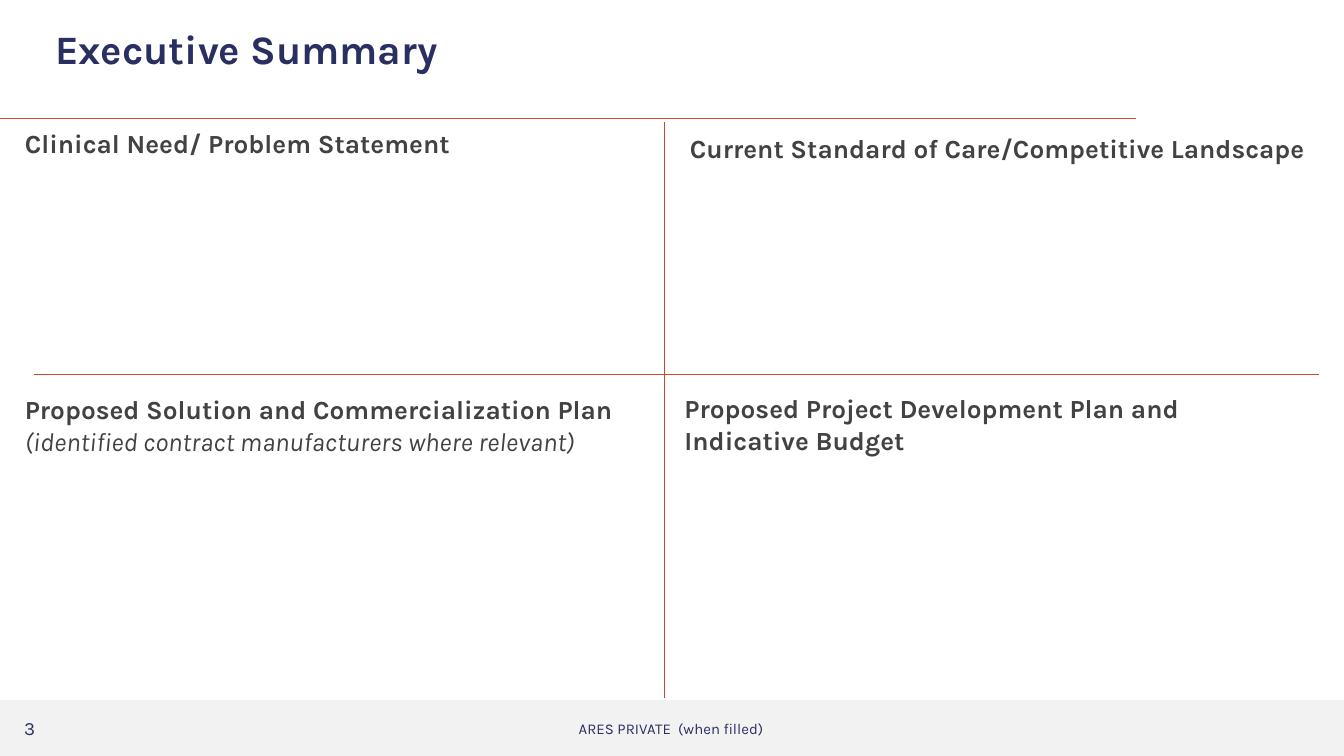
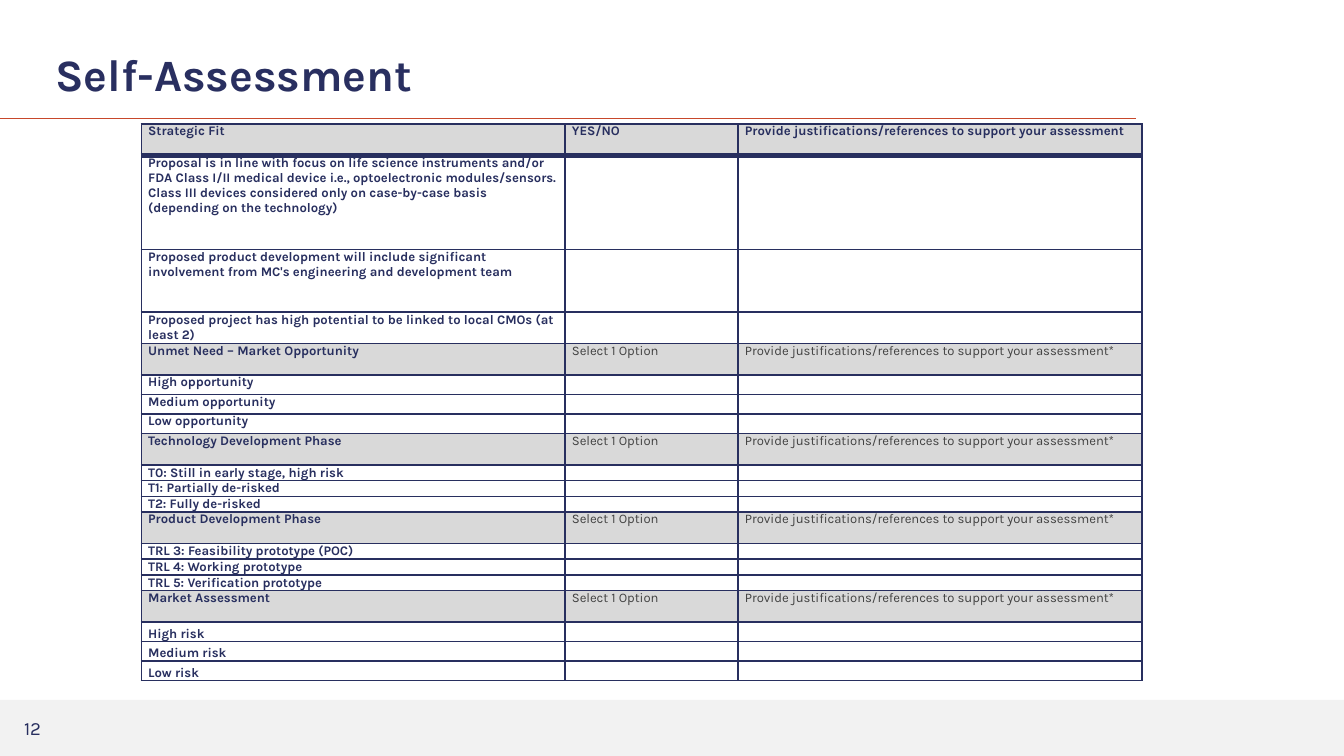
import pptx
import pptx.dml.color
import pptx.enum.shapes
import pptx.enum.text
import pptx.oxml
import pptx.oxml.ns
import pptx.util
from lxml import etree

Pt = pptx.util.Pt
RGBColor = pptx.dml.color.RGBColor
Anchor = pptx.enum.text.MSO_ANCHOR
Align = pptx.enum.text.PP_ALIGN
AutoSize = pptx.enum.text.MSO_AUTO_SIZE
qn = pptx.oxml.ns.qn

# Shared look
FONT = "Karla"
TITLE_NAVY = RGBColor(0x29, 0x2F, 0x60)
NAVY = RGBColor(0x28, 0x2F, 0x5F)
RUST = RGBColor(0xC7, 0x48, 0x2B)
CHARCOAL = RGBColor(0x42, 0x42, 0x42)
BAND_GREY = RGBColor(0xF2, 0xF2, 0xF2)
SECTION_GREY = RGBColor(0xD9, 0xD9, 0xD9)
WHITE = RGBColor(0xFF, 0xFF, 0xFF)

# Quadrants: left, top, width, height, heading, remark
QUADRANTS = [
    (6.2, 64.8, 286.6, 24.5, "Clinical Need/ Problem Statement", None),
    (362.5, 67.4, 364.3, 24.5,
     "Current Standard of Care/Competitive Landscape", None),
    (6.2, 207.4, 361.4, 41, "Proposed Solution and Commercialization Plan",
     "(identified contract manufacturers where relevant)"),
    (359.6, 206.9, 341.3, 41,
     "Proposed Project Development Plan and Indicative Budget", None),
]

# Assessment table: sections of (heading, criteria, row heights, anchor)
COLUMN_WIDTHS = (227, 92.7, 216.2)
HEADING_HEIGHT = 16.8
JUSTIFY = "Provide justifications/references to support your assessment"
SECTIONS = [
    ("Strategic Fit", [
        "Proposal is in line with focus on life science instruments and/or "
        "FDA Class I/II medical device i.e., optoelectronic modules/sensors. "
        "Class III devices considered only on case-by-case basis "
        "(depending on the technology)",
        "Proposed product development will include significant involvement "
        "from MC's engineering and development team",
        "Proposed project has high potential to be linked to local CMOs "
        "(at least 2)",
    ], (50.4, 33.7, 16.8), Anchor.TOP),
    ("Unmet Need – Market Opportunity",
     ["High opportunity", "Medium opportunity", "Low opportunity"],
     (10.5,) * 3, Anchor.TOP),
    ("Technology Development Phase",
     ["T0: Still in early stage, high risk", "T1: Partially de-risked",
      "T2: Fully de-risked"],
     (8.4,) * 3, Anchor.BOTTOM),
    ("Product Development Phase",
     ["TRL 3: Feasibility prototype (POC)", "TRL 4: Working prototype",
      "TRL 5: Verification prototype"],
     (8.4,) * 3, Anchor.BOTTOM),
    ("Market Assessment", ["High risk", "Medium risk", "Low risk"],
     (10.5,) * 3, Anchor.BOTTOM),
]


def write(frame, text, *, size, color, bold=False, italic=False,
          align=Align.LEFT, spacing=None):
    """Fill the frame's empty first paragraph, or add another one."""
    para = frame.paragraphs[0]
    if para.runs:
        para = frame.add_paragraph()
    para.alignment = align
    para.space_before = Pt(0)
    if spacing:
        para.line_spacing = spacing
    span = para.add_run()
    span.text = text
    span.font.name = FONT
    span.font.size = Pt(size)
    span.font.bold = bold
    span.font.italic = italic
    span.font.color.rgb = color
    return para


def place(shape, left, top, width, height):
    shape.left, shape.top = Pt(left), Pt(top)
    shape.width, shape.height = Pt(width), Pt(height)


def add_text_box(page, left, top, width, height):
    box = page.shapes.add_textbox(Pt(left), Pt(top), Pt(width), Pt(height))
    box.text_frame.word_wrap = True
    box.text_frame.auto_size = AutoSize.SHAPE_TO_FIT_TEXT
    return box.text_frame


def add_rule(page, x1, y1, x2, y2, weight):
    rule = page.shapes.add_connector(
        pptx.enum.shapes.MSO_CONNECTOR.STRAIGHT, Pt(x1), Pt(y1), Pt(x2), Pt(y2))
    rule.line.color.rgb = RUST
    rule.line.width = Pt(weight)
    etree.SubElement(rule._element.spPr, qn("a:effectLst"))


def add_band(page):
    """Footer band, sent behind the placeholders."""
    band = page.shapes.add_shape(
        pptx.enum.shapes.MSO_SHAPE.RECTANGLE, 0, Pt(375), Pt(720), Pt(30))
    band.shadow.inherit = False
    band.fill.solid()
    band.fill.fore_color.rgb = BAND_GREY
    band.line.fill.background()
    page.shapes.title._element.addprevious(band._element)


def add_page(deck, layout, number, title, title_size, title_top, anchor):
    """Page with title, title rule, footer band and page number."""
    page = deck.slides.add_slide(deck.slide_layouts[layout])
    add_band(page)
    add_rule(page, 0, 63.4, 608.4, 63.4, 0.75)
    write(add_text_box(page, 5.8, 380.5, 51.8, 19.4), str(number),
          size=10, color=NAVY)

    heading = page.shapes.title
    place(heading, 22.3, title_top, 678.2, 39.6)
    frame = heading.text_frame
    frame.word_wrap = True
    frame.auto_size = AutoSize.NONE
    frame.vertical_anchor = anchor
    if anchor == Anchor.TOP:
        frame.margin_top = 0
    write(frame, title, size=title_size, color=TITLE_NAVY, bold=True,
          spacing=0.9)
    return page


def add_marking(page, text):
    """Centred classification marking in the footer band."""
    marking = page.placeholders[1]
    place(marking, 258.5, 383, 202.3, 16.6)
    marking.text_frame.auto_size = AutoSize.NONE
    para = write(marking.text_frame, text, size=8, color=NAVY,
                 align=Align.CENTER, spacing=0.9)
    properties = para._p.get_or_add_pPr()
    properties.set("marL", "0")
    properties.set("indent", "0")
    etree.SubElement(properties, qn("a:buNone"))


def set_borders(cell, top, bottom):
    weights = {"a:lnL": 1, "a:lnR": 1, "a:lnT": top, "a:lnB": bottom}
    properties = cell._tc.get_or_add_tcPr()
    for position, (tag, weight) in enumerate(weights.items()):
        edge = etree.Element(qn(tag), w=str(Pt(weight)))
        fill = etree.SubElement(edge, qn("a:solidFill"))
        etree.SubElement(fill, qn("a:srgbClr"), val=str(NAVY))
        properties.insert(position, edge)


def fill_cell(cell, text, *, color=NAVY, bold=True, fill=WHITE,
              anchor=Anchor.TOP, top=1, bottom=1):
    cell.fill.solid()
    cell.fill.fore_color.rgb = fill
    cell.margin_left = cell.margin_right = Pt(3.6)
    cell.margin_top = cell.margin_bottom = 0
    cell.vertical_anchor = anchor
    set_borders(cell, top, bottom)
    if text:
        write(cell.text_frame, text, size=7, color=color, bold=bold)
    else:
        # Keeps an empty cell from stretching its row
        etree.SubElement(cell.text_frame.paragraphs[0]._p,
                         qn("a:endParaRPr"), sz="700")


def add_assessment(page):
    row_count = sum(1 + len(criteria) for _, criteria, _, _ in SECTIONS)
    height = sum(HEADING_HEIGHT + sum(heights) for _, _, heights, _ in SECTIONS)
    table = page.shapes.add_table(
        row_count, len(COLUMN_WIDTHS), Pt(75.8), Pt(66.4),
        Pt(sum(COLUMN_WIDTHS)), Pt(height)).table
    table.first_row = table.horz_banding = False
    for column, width in zip(table.columns, COLUMN_WIDTHS):
        column.width = Pt(width)

    row = 0
    for heading, criteria, heights, anchor in SECTIONS:
        # Grey heading row; the first one is the table header
        first = row == 0
        table.rows[row].height = Pt(HEADING_HEIGHT)
        labels = (heading, "YES/NO" if first else "Select 1 Option",
                  JUSTIFY if first else JUSTIFY + "*")
        for column, label in enumerate(labels):
            strong = first or column == 0
            fill_cell(table.cell(row, column), label, bold=strong,
                      color=NAVY if strong else CHARCOAL,
                      fill=SECTION_GREY, bottom=3 if first else 1)
        # Criteria with blank answer cells
        for criterion, row_height in zip(criteria, heights):
            row += 1
            table.rows[row].height = Pt(row_height)
            for column, label in enumerate((criterion, "", "")):
                fill_cell(table.cell(row, column), label, anchor=anchor,
                          top=3 if row == 1 else 1)
        row += 1


def main():
    deck = pptx.Presentation()
    deck.slide_width, deck.slide_height = Pt(720), Pt(405)

    # Executive summary: four quadrants
    summary = add_page(deck, 1, 3, "Executive Summary", 21.6, 15.9, Anchor.TOP)
    add_marking(summary, "ARES PRIVATE  (when filled)")
    add_rule(summary, 356, 65.5, 356, 373.7, 0.5)
    add_rule(summary, 706.7, 200.6, 18, 200.6, 0.5)
    for left, top, width, height, heading, remark in QUADRANTS:
        frame = add_text_box(summary, left, top, width, height)
        write(frame, heading, size=14, color=CHARCOAL, bold=True)
        if remark:
            write(frame, remark, size=14, color=CHARCOAL, italic=True)

    # Self-assessment: scoring table
    assessment = add_page(deck, 5, 12, "Self-Assessment", 24, 21.6,
                          Anchor.MIDDLE)
    add_assessment(assessment)

    deck.save("out.pptx")


if __name__ == "__main__":
    main()
